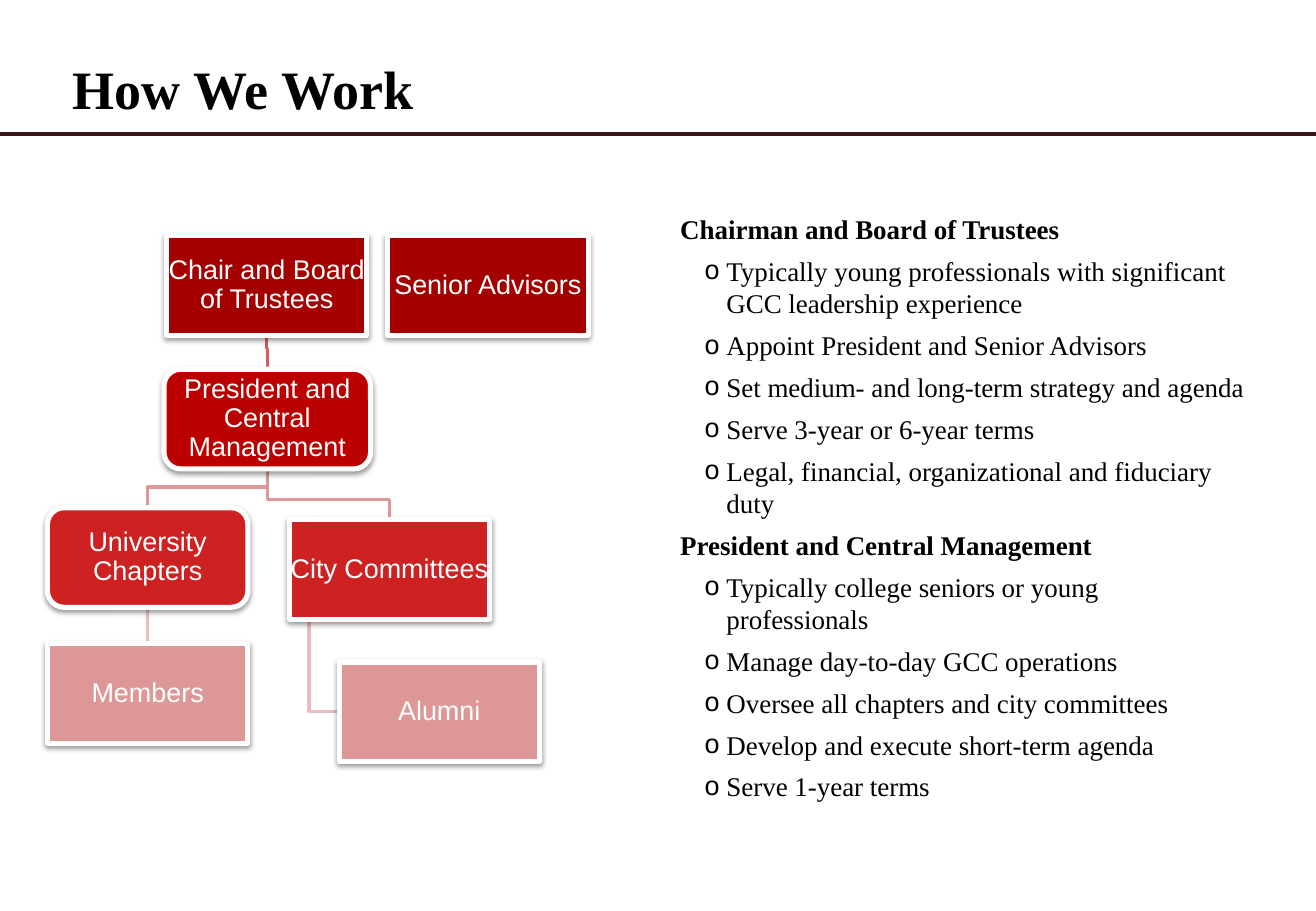
from lxml import etree
from pptx import Presentation
from pptx.dml.color import RGBColor
from pptx.enum.shapes import MSO_CONNECTOR, MSO_SHAPE
from pptx.enum.text import MSO_ANCHOR, MSO_AUTO_SIZE, PP_ALIGN
from pptx.oxml.ns import qn
from pptx.util import Inches, Pt

RECT, ROUNDED = MSO_SHAPE.RECTANGLE, MSO_SHAPE.ROUNDED_RECTANGLE
STRAIGHT = MSO_CONNECTOR.STRAIGHT
LEFT, CENTER = PP_ALIGN.LEFT, PP_ALIGN.CENTER
TOP, MIDDLE, BOTTOM = MSO_ANCHOR.TOP, MSO_ANCHOR.MIDDLE, MSO_ANCHOR.BOTTOM
NO_AUTOFIT = MSO_AUTO_SIZE.NONE

SLIDE_W, SLIDE_H = 10.83, 7.5
SERIF, SANS = "Times New Roman", "Arial"
BLACK, WHITE, RULE_COLOR = "000000", "FFFFFF", "3F1617"
TRUSTEE_RED, PRESIDENT_RED, GROUP_RED, PEOPLE_PINK = "A40000", "BA0000", "CE2222", "DE9797"
TOP_LINK, MIDDLE_LINK, LOW_LINK = "D35E5E", "DE9797", "E8BDBD"

UNIT_W, UNIT_H = 1.65, 0.82
# label: left and top within the chart, width, outline, fill
UNITS = {
    "Chair and Board of Trustees": (0.98, 0, UNIT_W, RECT, TRUSTEE_RED),
    "President and Central Management": (0.96, 1.1, 1.7, ROUNDED, PRESIDENT_RED),
    "University Chapters": (0, 2.24, UNIT_W, ROUNDED, GROUP_RED),
    "Members": (0, 3.36, UNIT_W, RECT, PEOPLE_PINK),
    "City Committees": (1.99, 2.34, UNIT_W, RECT, GROUP_RED),
    "Alumni": (2.4, 3.51, UNIT_W, RECT, PEOPLE_PINK),
    "Senior Advisors": (2.8, 0, UNIT_W, RECT, TRUSTEE_RED),
}
# upper unit, lower unit, colour, drop from the lower unit's top to the bend
LINKS = [
    ("City Committees", "Alumni", LOW_LINK, None),
    ("President and Central Management", "City Committees", MIDDLE_LINK, 0.17),
    ("University Chapters", "Members", LOW_LINK, 0.17),
    ("President and Central Management", "University Chapters", MIDDLE_LINK, 0.17),
    ("Chair and Board of Trustees", "President and Central Management", TOP_LINK, 0.17),
]
ROLES = {
    "Chairman and Board of Trustees": [
        "Typically young professionals with significant GCC leadership experience",
        "Appoint President and Senior Advisors",
        "Set medium- and long-term strategy and agenda",
        "Serve 3-year or 6-year terms",
        "Legal, financial, organizational and fiduciary duty",
    ],
    "President and Central Management": [
        "Typically college seniors or young professionals",
        "Manage day-to-day GCC operations",
        "Oversee all chapters and city committees",
        "Develop and execute short-term agenda",
        "Serve 1-year terms",
    ],
}


def rgb(color):
    return RGBColor.from_string(color)


def set_all(target, values):
    for name, value in values.items():
        setattr(target, name, value)


def format_frame(frame, anchor, inset):
    margins = {f"margin_{side}": Inches(inset) for side in ("left", "right", "top", "bottom")}
    set_all(frame, {"word_wrap": True, "auto_size": NO_AUTOFIT,
                    "vertical_anchor": anchor, **margins})


def write(paragraph, text, size, face, color, bold=False, align=LEFT):
    paragraph.alignment = align
    run = paragraph.add_run()
    run.text = text
    set_all(run.font, {"size": Pt(size), "name": face, "bold": bold})
    run.font.color.rgb = rgb(color)


def add_bullet(paragraph):
    properties = paragraph._p.get_or_add_pPr()
    properties.set("marL", str(Inches(0.38)))
    properties.set("indent", str(Inches(-0.18)))
    etree.SubElement(properties, qn("a:buFont")).set("typeface", SANS)
    etree.SubElement(properties, qn("a:buChar")).set("char", "o")


def add_soft_shadow(shape):
    shape.shadow.inherit = False
    effects = shape._element.spPr.find(qn("a:effectLst"))
    shadow = etree.SubElement(effects, qn("a:outerShdw"), blurRad=str(Pt(3.1)),
                              dist=str(Pt(1.6)), dir="5400000", rotWithShape="0")
    shade = etree.SubElement(shadow, qn("a:srgbClr"), val=BLACK)
    etree.SubElement(shade, qn("a:alpha"), val="38000")


def add_line(slide, points, color, width):
    """Draw a straight connector for two points, an open outline for more."""
    corners = [(Inches(x), Inches(y)) for x, y in points]
    if len(corners) == 2:
        line = slide.shapes.add_connector(STRAIGHT, *corners[0], *corners[1])
        etree.SubElement(line._element.spPr, qn("a:effectLst"))
    else:
        builder = slide.shapes.build_freeform(*corners[0])
        builder.add_line_segments(corners[1:], close=False)
        line = builder.convert_to_shape()
        line.fill.background()
        line.shadow.inherit = False
    line.line.color.rgb = rgb(color)
    line.line.width = Pt(width)


def add_title(slide, text, left, top, width, height):
    title = slide.shapes.title
    set_all(title, {"left": Inches(left), "top": Inches(top),
                    "width": Inches(width), "height": Inches(height)})
    format_frame(title.text_frame, BOTTOM, 0.1)
    write(title.text_frame.paragraphs[0], text, 32, SERIF, BLACK, bold=True)
    add_line(slide, [(SLIDE_W, 1.1), (0, 1.1)], RULE_COLOR, 2.25)


def link_points(upper, lower, bend, left, top):
    """Route from the upper unit's base to the lower unit's top, or to its side without a bend."""
    upper_x, upper_y, upper_w = UNITS[upper][:3]
    lower_x, lower_y, lower_w = UNITS[lower][:3]
    start_y, end_x = top + upper_y + UNIT_H, left + lower_x + lower_w / 2
    if bend is None:
        x, y = left + upper_x + upper_w / 10, top + lower_y + UNIT_H / 2
        return [(x, start_y), (x, y), (left + lower_x, y)]
    start_x, end_y = left + upper_x + upper_w / 2, top + lower_y
    if start_x == end_x:
        return [(start_x, start_y), (end_x, end_y)]
    return [(start_x, start_y), (start_x, end_y - bend), (end_x, end_y - bend), (end_x, end_y)]


def add_org_chart(slide, left, top):
    for upper, lower, color, bend in LINKS:
        add_line(slide, link_points(upper, lower, bend, left, top), color, 2)
    for label, (x, y, width, outline, fill) in UNITS.items():
        unit = slide.shapes.add_shape(outline, Inches(left + x), Inches(top + y),
                                      Inches(width), Inches(UNIT_H))
        unit.fill.solid()
        unit.fill.fore_color.rgb = rgb(fill)
        unit.line.color.rgb = rgb(WHITE)
        unit.line.width = Pt(3)
        add_soft_shadow(unit)
        format_frame(unit.text_frame, MIDDLE, 0.01)
        paragraph = unit.text_frame.paragraphs[0]
        paragraph.line_spacing = 0.9
        write(paragraph, label, 16, SANS, WHITE, align=CENTER)


def add_roles(slide, left, top, width, height):
    box = slide.shapes.add_textbox(Inches(left), Inches(top), Inches(width), Inches(height))
    frame = box.text_frame
    format_frame(frame, TOP, 0.1)
    lines = [(text, text == role) for role, duties in ROLES.items() for text in (role, *duties)]
    for index, (text, is_heading) in enumerate(lines):
        paragraph = frame.add_paragraph() if index else frame.paragraphs[0]
        if index:
            paragraph.space_before = Pt(5.6)
        if not is_heading:
            add_bullet(paragraph)
        write(paragraph, text, 16, SERIF, BLACK, bold=is_heading)


def main():
    deck = Presentation()
    set_all(deck, {"slide_width": Inches(SLIDE_W), "slide_height": Inches(SLIDE_H)})
    slide = deck.slides.add_slide(deck.slide_layouts[5])
    add_title(slide, "How We Work", 0.5, 0.18, 9.84, 0.91)
    add_roles(slide, 5.5, 1.65, 4.84, 5.02)
    add_org_chart(slide, 0.39, 1.94)
    deck.save("out.pptx")


if __name__ == "__main__":
    main()
